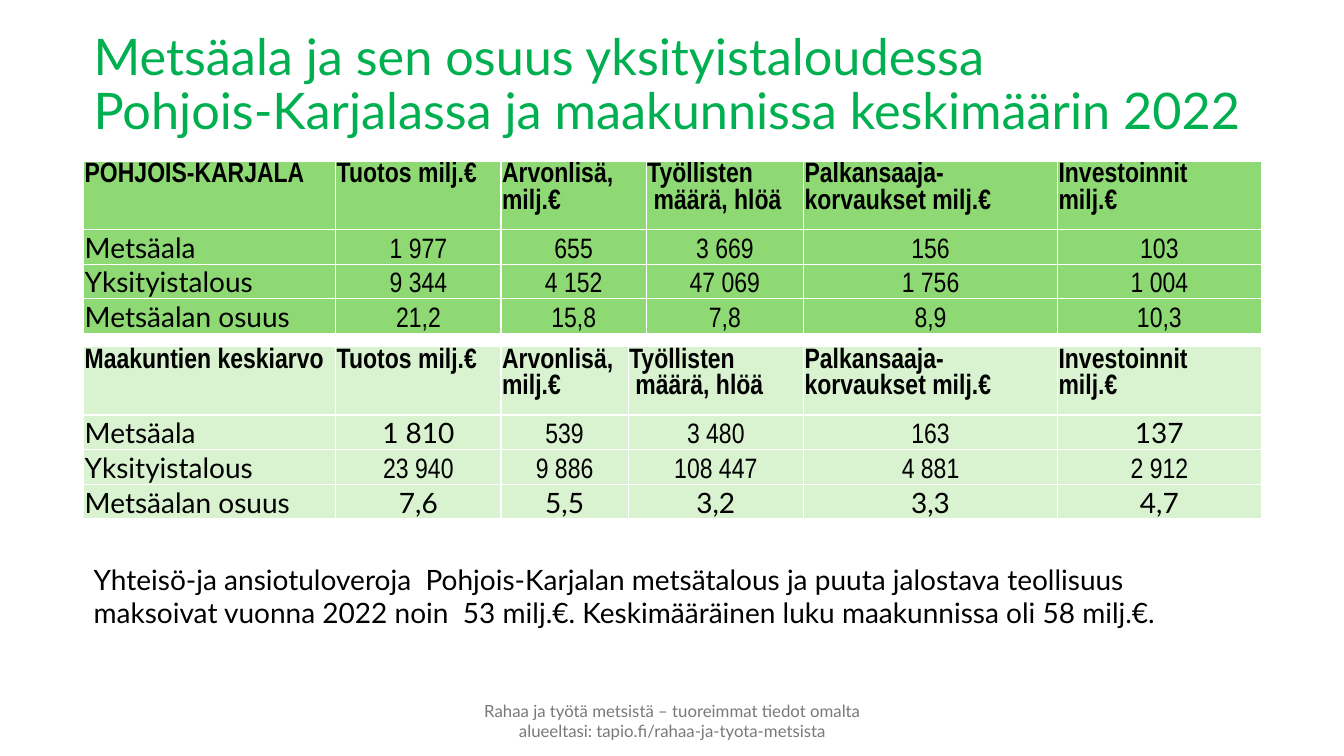
from dataclasses import dataclass

from lxml.etree import SubElement
from pptx import Presentation
from pptx.dml.color import RGBColor
from pptx.enum.text import MSO_ANCHOR as Anchor, PP_ALIGN as Align
from pptx.oxml.ns import qn
from pptx.slide import Slide
from pptx.table import _Cell as Cell
from pptx.text.text import TextFrame
from pptx.util import Inches, Pt

BODY_FONT = "Lato"
NARROW_FONT = "Arial Narrow"
LEFT = 0.83
HEADER_HEIGHT, ROW_HEIGHT = 0.52, 0.34
HEADINGS = ["Tuotos milj.€", "Arvonlisä, milj.€", "Työllisten\n määrä, hlöä",
            "Palkansaaja-korvaukset milj.€", "Investoinnit\nmilj.€"]
ROW_LABELS = ["Metsäala", "Yksityistalous", "Metsäalan osuus"]


@dataclass
class TextStyle:
    size: float
    color: str = "000000"
    font: str = BODY_FONT
    bold: bool = False
    align: Align = Align.LEFT
    line_spacing: float = 1.0


@dataclass
class TextBox:
    place: tuple[float, float, float, float]
    text: str
    style: TextStyle
    anchor: Anchor = Anchor.TOP


@dataclass
class RegionTable:
    region: str
    top: float
    fill: str
    widths: list[float]
    values: list[list[str]]
    body_font_cells: set[tuple[int, int]]


TEXT_BOXES = [
    TextBox((4.32, 6.95, 4.7, 0.4),
            "Rahaa ja työtä metsistä – tuoreimmat tiedot omalta alueeltasi: "
            "tapio.fi/rahaa-ja-tyota-metsista",
            TextStyle(12, "797979", align=Align.CENTER), Anchor.MIDDLE),
    TextBox((LEFT, 0.13, 12.19, 1.45),
            "Metsäala ja sen osuus yksityistaloudessa\n"
            "Pohjois-Karjalassa ja maakunnissa keskimäärin 2022",
            TextStyle(36, "00B050", line_spacing=0.9), Anchor.MIDDLE),
    TextBox((LEFT, 5.53, 10.9, 0.77),
            "Yhteisö-ja ansiotuloveroja  Pohjois-Karjalan metsätalous ja puuta "
            "jalostava teollisuus maksoivat vuonna 2022 noin  53 milj.€. "
            "Keskimääräinen luku maakunnissa oli 58 milj.€.",
            TextStyle(20)),
]
TABLES = [
    RegionTable("POHJOIS-KARJALA", 1.6, "8ED973",
                [2.5, 1.64, 1.44, 1.56, 2.52, 2.02],
                [["1 977", "655", "3 669", "156", "103"],
                 ["9 344", "4 152", "47 069", "1 756", "1 004"],
                 ["21,2", "15,8", "7,8", "8,9", "10,3"]],
                set()),
    RegionTable("Maakuntien keskiarvo", 3.44, "D9F2D0",
                [2.5, 1.64, 1.26, 1.74, 2.52, 2.02],
                [["1 810", "539", "3 480", "163", "137"],
                 ["23 940", "9 886", "108 447", "4 881", "2 912"],
                 ["7,6", "5,5", "3,2", "3,3", "4,7"]],
                {(1, 1), (1, 5)} | {(3, column) for column in range(1, 6)}),
]


def rgb(color: str) -> RGBColor:
    return RGBColor.from_string(color)


def write_text(frame: TextFrame, text: str, style: TextStyle) -> None:
    """Write one paragraph for each line of text."""
    formats = {"size": Pt(style.size), "name": style.font, "bold": style.bold}
    for index, line in enumerate(text.split("\n")):
        para = frame.add_paragraph() if index else frame.paragraphs[0]
        para.alignment = style.align
        para.line_spacing = style.line_spacing
        span = para.add_run()
        span.text = line
        for name, value in formats.items():
            setattr(span.font, name, value)
        span.font.color.rgb = rgb(style.color)


def add_text_box(page: Slide, item: TextBox) -> None:
    box = page.shapes.add_textbox(*map(Inches, item.place))
    box.text_frame.word_wrap = True
    box.text_frame.vertical_anchor = item.anchor
    write_text(box.text_frame, item.text, item.style)


def add_borders(cell: Cell, color: str, width: float) -> None:
    properties = cell._tc.get_or_add_tcPr()
    for side in ("lnL", "lnR", "lnT", "lnB"):
        line = SubElement(properties, qn(f"a:{side}"), w=str(Pt(width)))
        fill = SubElement(line, qn("a:solidFill"))
        SubElement(fill, qn("a:srgbClr"), val=color)


def cell_style(item: RegionTable, row: int, column: int) -> TextStyle:
    if row == 0:
        return TextStyle(20, font=NARROW_FONT, bold=True)
    if column == 0:
        return TextStyle(20)
    font = BODY_FONT if (row, column) in item.body_font_cells else NARROW_FONT
    return TextStyle(20, font=font, align=Align.CENTER)


def add_region_table(page: Slide, item: RegionTable) -> None:
    rows = [[item.region, *HEADINGS]]
    rows += [[label, *values] for label, values in zip(ROW_LABELS, item.values)]
    heights = [HEADER_HEIGHT] + [ROW_HEIGHT] * len(ROW_LABELS)
    place = (LEFT, item.top, sum(item.widths), sum(heights))
    table = page.shapes.add_table(len(rows), len(item.widths), *map(Inches, place)).table
    table.first_row = table.horz_banding = False
    for column, width in zip(table.columns, item.widths):
        column.width = Inches(width)
    for row, height in zip(table.rows, heights):
        row.height = Inches(height)
    margins = {"margin_left": 0.01, "margin_right": 0.01,
               "margin_top": 0.01, "margin_bottom": 0}
    for row, texts in enumerate(rows):
        for column, text in enumerate(texts):
            cell = table.cell(row, column)
            for name, value in margins.items():
                setattr(cell, name, Inches(value))
            cell.vertical_anchor = Anchor.BOTTOM if row else Anchor.TOP
            add_borders(cell, "FFFFFF", 1)
            cell.fill.solid()
            cell.fill.fore_color.rgb = rgb(item.fill)
            write_text(cell.text_frame, text, cell_style(item, row, column))


def main() -> None:
    deck = Presentation()
    deck.slide_width, deck.slide_height = Inches(13.33), Inches(7.5)
    page = deck.slides.add_slide(deck.slide_layouts[6])
    for item in TEXT_BOXES:
        add_text_box(page, item)
    for item in TABLES:
        add_region_table(page, item)
    deck.save("out.pptx")


if __name__ == "__main__":
    main()
